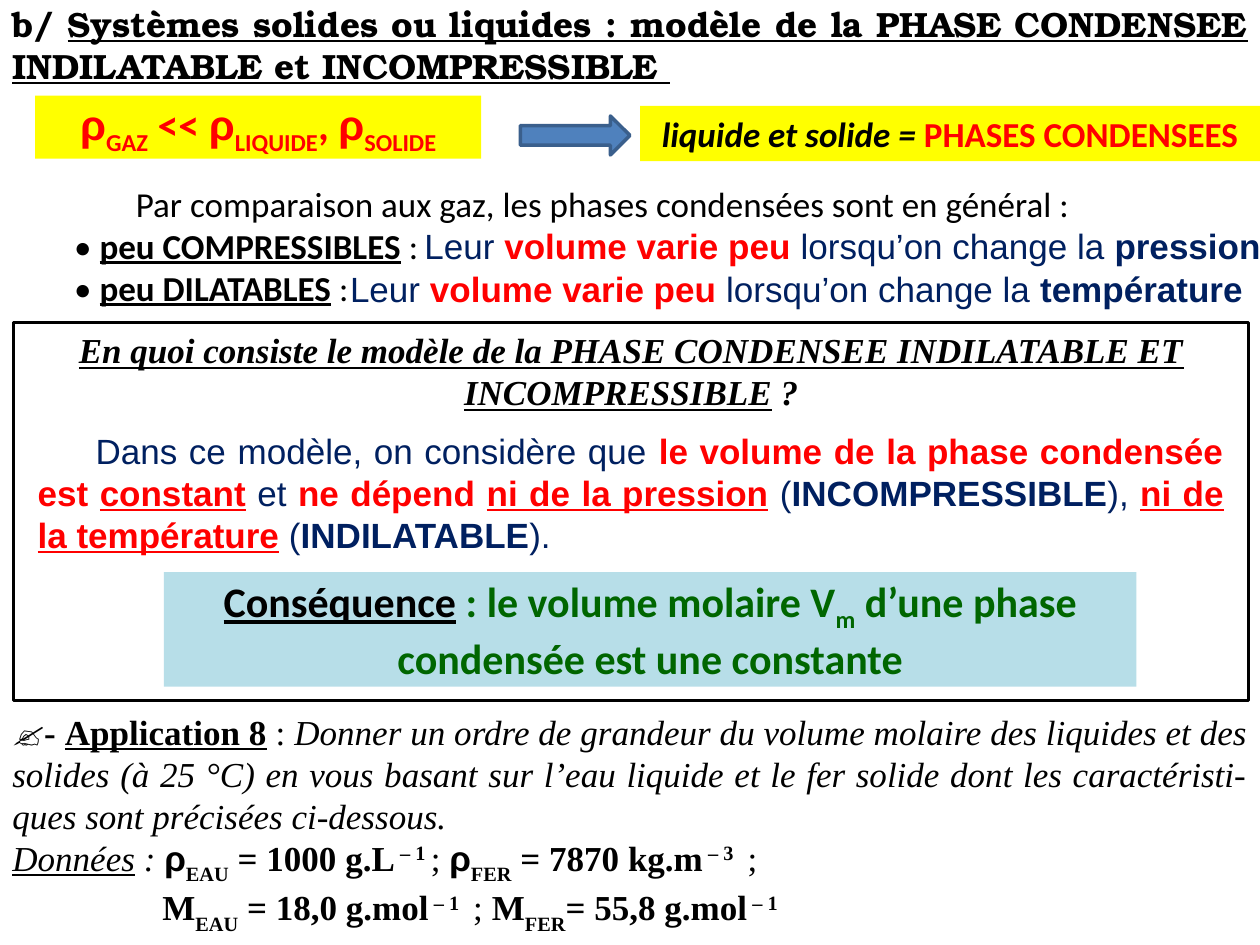
from pptx import Presentation
from pptx.dml.color import RGBColor
from pptx.enum.shapes import MSO_SHAPE
from pptx.enum.text import MSO_ANCHOR, PP_ALIGN
from pptx.util import Inches, Pt

RECTANGLE, RIGHT_ARROW = MSO_SHAPE.RECTANGLE, MSO_SHAPE.RIGHT_ARROW
TOP, MIDDLE = MSO_ANCHOR.TOP, MSO_ANCHOR.MIDDLE
LEFT, CENTER, JUSTIFY = PP_ALIGN.LEFT, PP_ALIGN.CENTER, PP_ALIGN.JUSTIFY


class Theme:
    black, red, navy, green = "000000", "FF0000", "002060", "006600"
    yellow, pale_blue = "FFFF00", "B7DEE8"
    arrow_fill, arrow_edge = "4F81BD", "3A5F8C"
    sans, body, serif, title = "Arial", "Calibri", "Times New Roman", "TeX Gyre Bonum"
    normal, large = Pt(20), Pt(24)
    after = Pt(10)


T = Theme
FLAGS = {"b": "bold", "i": "italic", "u": "underline"}
BASELINES = {"_": -25000, "v": -30000, "^": 30000}

deck = Presentation()
deck.slide_width, deck.slide_height = Inches(10), Inches(7.5)
COLUMN, ROW = deck.slide_width / 100, deck.slide_height / 75
slide = deck.slides.add_slide(deck.slide_layouts[6])


def add_panel(place, fill=None, edge=None, weight=0, kind=RECTANGLE):
    """Add a preset shape at (column, row, columns, rows)."""
    units = (COLUMN, ROW, COLUMN, ROW)
    panel = slide.shapes.add_shape(kind, *(int(n * u) for n, u in zip(place, units)))
    panel.shadow.inherit = False
    if fill:
        panel.fill.solid()
        panel.fill.fore_color.rgb = RGBColor.from_string(fill)
    else:
        panel.fill.background()
    if edge:
        panel.line.color.rgb = RGBColor.from_string(edge)
        panel.line.width = Pt(weight)
    else:
        panel.line.fill.background()
    return panel


def write(frame, paragraphs, font, size=T.normal, color=T.black,
          align=JUSTIFY, anchor=TOP, after=None):
    """Fill a frame with (indents, runs); a run is text, flags, colour, font.

    Flags: b, i, u for the style, _ and v for subscripts, ^ for a superscript.
    """
    frame.word_wrap = True
    frame.vertical_anchor = anchor
    for number, ((margin, indent), runs) in enumerate(paragraphs):
        paragraph = frame.add_paragraph() if number else frame.paragraphs[0]
        paragraph.alignment, paragraph.space_after = align, after
        properties = paragraph._p.get_or_add_pPr()
        properties.set("marL", str(int(margin * COLUMN)))
        properties.set("indent", str(int(indent * COLUMN)))
        for text, flags, *own in runs:
            run = paragraph.add_run()
            run.text = text
            own_color, own_font = (own + [None, None])[:2]
            formats = {"size": size, "name": own_font or font}
            formats.update({name: flag in flags for flag, name in FLAGS.items()})
            for name, value in formats.items():
                setattr(run.font, name, value)
            run.font.color.rgb = RGBColor.from_string(own_color or color)
            for flag, shift in BASELINES.items():
                if flag in flags:
                    run.font._element.set("baseline", str(shift))


FLUSH = (0, 0)
FIRST_TAB, SECOND_TAB = (0, 4.9), (0, 9.8)

# Heading
heading = add_panel((0, -0.3, 100, 7.7))
write(heading.text_frame, [(FLUSH, [
    ("b/ ", "b"),
    ("Systèmes solides ou liquides : modèle de la PHASE CONDENSEE "
     "INDILATABLE et INCOMPRESSIBLE ", "bu"),
])], T.title, anchor=MIDDLE)

# General properties of condensed phases
general = add_panel((0, 13.9, 100, 11.1))
comparison = [(SECOND_TAB, [
    ("Par comparaison aux gaz, les phases condensées sont en général :", "")])]
for quality in ("COMPRESSIBLES", "DILATABLES"):
    comparison.append((FIRST_TAB, [("• ", ""), (f"peu {quality}", "bu"), (" : ", "")]))
write(general.text_frame, comparison, T.body, anchor=MIDDLE)

# Densities lead to condensed phases
condensed = add_panel((50.8, 8.4, 49.2, 4.4), T.yellow)
write(condensed.text_frame, [(FLUSH, [
    ("liquide et solide = ", "bi"), ("PHASES CONDENSEES", "b", T.red),
])], T.body, align=CENTER)

densities = add_panel((2.8, 7.6, 35.4, 5), T.yellow)
density_runs = []
for state, link in (("GAZ", " << "), ("LIQUIDE", ", "), ("SOLIDE", "")):
    density_runs += [("ρ", "b", T.red, T.sans), (state, "b_")]
    if link:
        density_runs.append((link, "b"))
write(densities.text_frame, [(FLUSH, density_runs)], T.body, T.large, T.red,
      CENTER, MIDDLE)

add_panel((41.3, 9.2, 8.7, 3.1), T.arrow_fill, T.arrow_edge, 2, RIGHT_ARROW)

# Explanations beside the two properties
for place, cause in (((32.7, 17.3, 70.1, 4.7), "pression"),
                     ((26.8, 20.7, 73.6, 3.9), "température")):
    explanation = add_panel(place)
    write(explanation.text_frame, [(FLUSH, [
        ("Leur ", ""), ("volume varie peu ", "b", T.red),
        ("lorsqu’on change la ", ""), (cause, "b"),
    ])], T.sans, color=T.navy, align=LEFT, after=T.after)

# Framed model
model = add_panel((1.1, 25.6, 98, 30), edge=T.black, weight=1.5)
write(model.text_frame, [(FLUSH, [
    ("En quoi consiste le modèle de la PHASE CONDENSEE INDILATABLE ET "
     "INCOMPRESSIBLE", "biu"),
    (" ?", "bi"),
])], T.serif, align=CENTER, after=T.after)

definition = add_panel((2, 33.6, 96.1, 7.6))
write(definition.text_frame, [((0, 4.6), [
    ("Dans ce modèle, on considère que ", ""),
    ("le volume de la phase condensée est ", "b", T.red),
    ("constant", "bu", T.red),
    (" et ", ""),
    ("ne dépend ", "b", T.red),
    ("ni de la pression", "bu", T.red),
    (" (", ""), ("INCOMPRESSIBLE", "b"), ("), ", ""),
    ("ni de la température", "bu", T.red),
    (" (", ""), ("INDILATABLE", "b"), (").", ""),
])], T.sans, color=T.navy, after=T.after)

consequence = add_panel((13, 45.4, 77.2, 9.1), T.pale_blue)
write(consequence.text_frame, [(FLUSH, [
    ("Conséquence", "bu", T.black),
    (" : le volume molaire V", "b"), ("m", "b_"),
    (" d’une phase condensée est une constante", "b"),
])], T.body, T.large, T.green, CENTER, MIDDLE)

# Exercise
exercise = add_panel((0, 56.4, 100, 17.8))
write(exercise.text_frame, [
    (FLUSH, [
        ("✍- ", "b"), ("Application 8", "bu"), (" : ", ""),
        ("Donner un ordre de grandeur du volume molaire des liquides et des "
         "solides (à 25 °C) en vous basant sur l’eau liquide et le fer solide "
         "dont les caractéristi-ques sont précisées ci-dessous.", "i"),
    ]),
    (FLUSH, [
        ("Données", "iu"), (" : ", "i"),
        ("ρ", "b", T.black, T.sans), ("EAU", "bv"),
        (" = 1000 g.L", "b"), (" – 1 ", "b^"), ("; ", ""),
        ("ρ", "b", T.black, T.sans), ("FER", "bv"),
        (" = 7870 kg.m", "b"), (" – 3 ", "b^"), (" ;", ""),
    ]),
    ((11.9, 0), [
        ("M", "b"), ("EAU", "bv"),
        (" = 18,0 g.mol", "b"), (" – 1 ", "b^"), (" ; ", ""),
        ("M", "b"), ("FER", "bv"),
        ("= 55,8 g.mol", "b"), (" – 1", "b^"),
    ]),
], T.serif, anchor=MIDDLE)

deck.save("out.pptx")
